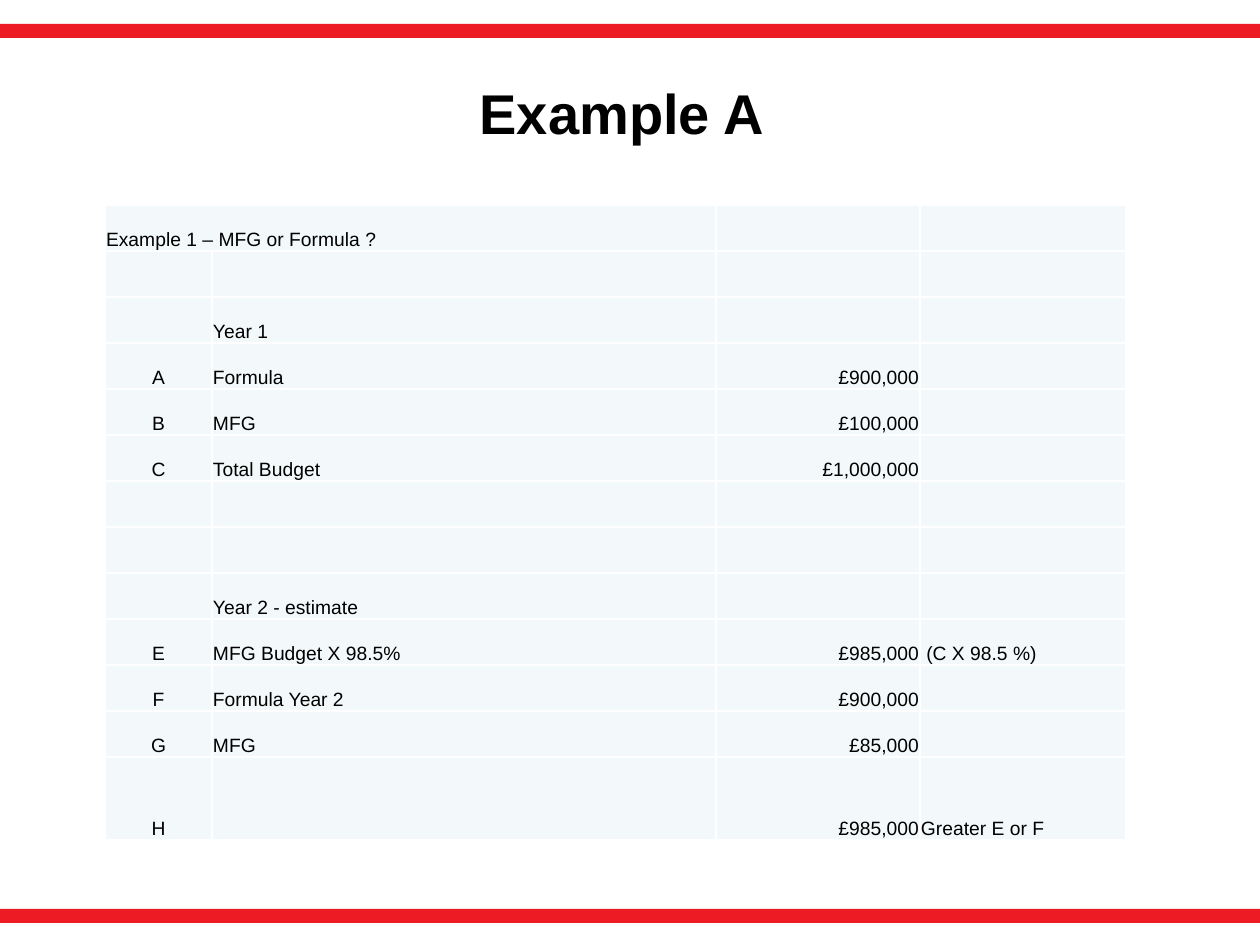
from dataclasses import dataclass

from lxml import etree
from pptx import Presentation
from pptx import util as u
from pptx.dml.color import RGBColor
from pptx.enum import shapes, text
from pptx.oxml.ns import qn


@dataclass(frozen=True)
class Theme:
    font: str = "Arial"
    ink: str = "000000"
    bar: str = "ED1C24"
    cell: str = "F3F9FA"
    border: str = "FFFFFF"
    title_size: int = 32
    body_size: int = 11


def px(length):
    return u.Emu(round(length * 914400 / 126))


class SlideBuilder:
    def __init__(self, slide, theme):
        self.slide = slide
        self.theme = theme

    def set_wording(self, frame, wording, size, align, bold=False):
        frame.text = wording
        paragraph = frame.paragraphs[0]
        paragraph.alignment = align
        for run in paragraph.runs:
            run.font.name = self.theme.font
            run.font.size = u.Pt(size)
            run.font.bold = bold
            run.font.color.rgb = RGBColor.from_string(self.theme.ink)

    def title(self, wording, left, top, width, height):
        heading = self.slide.shapes.title
        heading.left, heading.top = px(left), px(top)
        heading.width, heading.height = px(width), px(height)
        frame = heading.text_frame
        self.set_wording(frame, wording, self.theme.title_size, text.PP_ALIGN.CENTER, True)
        frame.vertical_anchor = text.MSO_ANCHOR.MIDDLE
        frame.margin_left, frame.margin_right = px(12), px(28)
        frame.margin_top, frame.margin_bottom = px(6), px(16)

    def bar(self, left, top, width, height):
        stripe = self.slide.shapes.add_shape(
            shapes.MSO_SHAPE.RECTANGLE, px(left), px(top), px(width), px(height))
        stripe.shadow.inherit = False
        stripe.fill.solid()
        stripe.fill.fore_color.rgb = RGBColor.from_string(self.theme.bar)
        stripe.line.fill.background()

    def border(self, cell):
        properties = cell._tc.get_or_add_tcPr()
        for position, side in enumerate(("a:lnL", "a:lnR", "a:lnT", "a:lnB")):
            line = etree.Element(qn(side), w=str(u.Pt(1)))
            fill = etree.SubElement(line, qn("a:solidFill"))
            etree.SubElement(fill, qn("a:srgbClr"), val=self.theme.border)
            properties.insert(position, line)

    def table(self, rows, left, top, widths, heights, aligns):
        grid = self.slide.shapes.add_table(
            len(rows), len(widths), px(left), px(top),
            px(sum(widths)), px(sum(heights))).table
        grid.first_row = grid.horz_banding = False
        for column, width in zip(grid.columns, widths):
            column.width = px(width)
        for row, height, entries in zip(grid.rows, heights, rows):
            row.height = px(height)
            for cell, entry, align in zip(row.cells, entries, aligns):
                cell.margin_left = cell.margin_right = cell.margin_top = px(1)
                cell.margin_bottom = 0
                cell.vertical_anchor = text.MSO_ANCHOR.BOTTOM
                cell.fill.solid()
                cell.fill.fore_color.rgb = RGBColor.from_string(self.theme.cell)
                self.border(cell)
                if entry:
                    self.set_wording(cell.text_frame, entry, self.theme.body_size, align)
        return grid


def main():
    deck = Presentation()
    deck.slide_width, deck.slide_height = px(1260), px(945)
    builder = SlideBuilder(deck.slides.add_slide(deck.slide_layouts[5]), Theme())

    for bar_top in (24, 909):
        builder.bar(0, bar_top, 1260, 14)
    builder.title("Example A", 63, 38, 1134, 158)

    blank = ("", "", "", "")
    budget = [
        ("Example 1 – MFG or Formula ?", "", "", ""),
        blank,
        ("", "Year 1", "", ""),
        ("A", "Formula", "£900,000", ""),
        ("B", "MFG", "£100,000", ""),
        ("C", "Total Budget", "£1,000,000", ""),
        blank,
        blank,
        ("", "Year 2 - estimate", "", ""),
        ("E", "MFG Budget X 98.5%", "£985,000", " (C X 98.5 %)"),
        ("F", "Formula Year 2", "£900,000", ""),
        ("G", "MFG", "£85,000", ""),
        ("H", "", "£985,000", "Greater E or F"),
    ]
    align = text.PP_ALIGN
    grid = builder.table(
        budget, 105, 205, (107, 504, 204, 206), [46] * 12 + [83],
        (align.CENTER, align.LEFT, align.RIGHT, align.LEFT))
    heading = grid.cell(0, 0)
    heading.merge(grid.cell(0, 1))
    heading.text_frame.paragraphs[0].alignment = align.LEFT

    deck.save("out.pptx")


if __name__ == "__main__":
    main()
